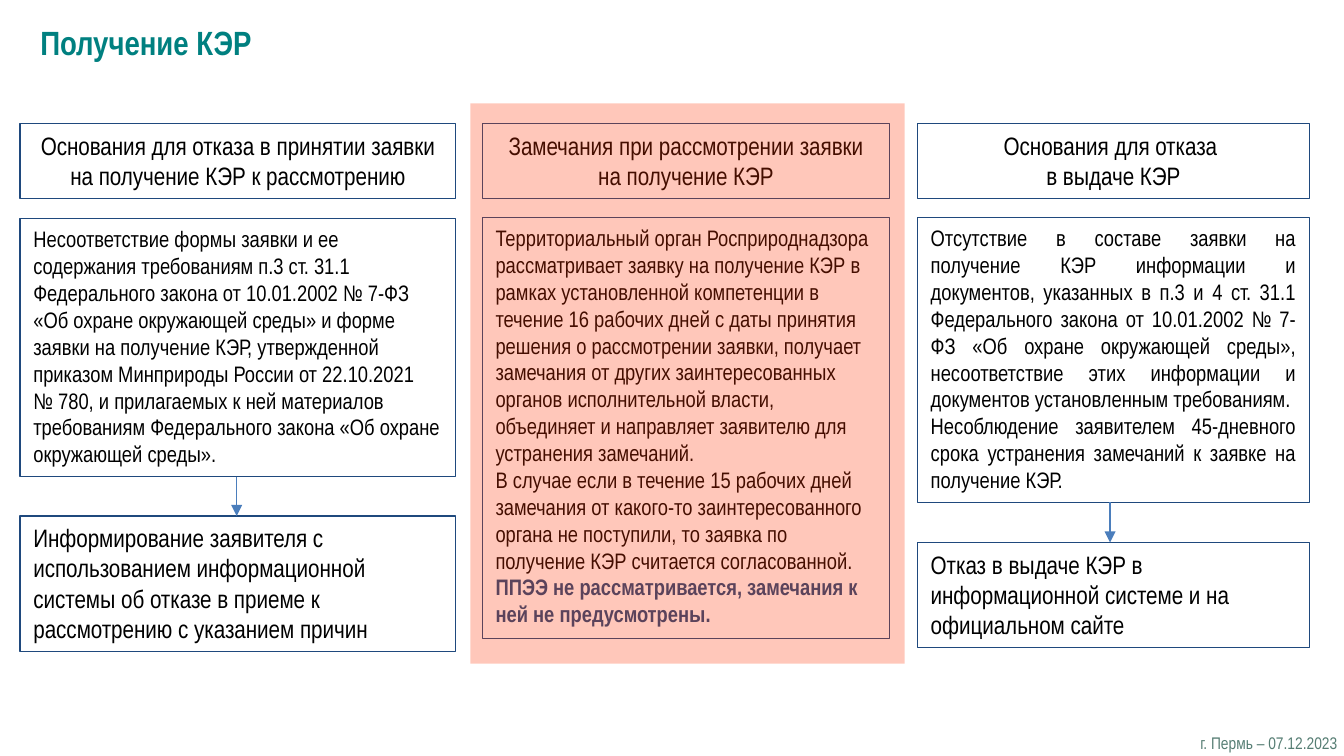
from lxml import etree
from pptx import Presentation
from pptx.dml.color import RGBColor
from pptx.enum.shapes import MSO_CONNECTOR, MSO_SHAPE
from pptx.enum.text import MSO_ANCHOR, MSO_AUTO_SIZE, PP_ALIGN
from pptx.oxml.ns import qn
from pptx.util import Pt

FONT = "Arial Narrow"
BLACK, NAVY, BLUE = "000000", "1F497D", "4B7EBC"
TEAL, GREEN, RED = "008080", "557D73", "FF3300"
HEADER_TOP, HEADER_HEIGHT = 66.2, 40.3
HEADER_SIZE, BODY_SIZE = 13.5, 12

TITLE = "Получение КЭР"
FOOTER = "г. Пермь – 07.12.2023"
HIGHLIGHT = (252, 55.4, 232.6, 300.2)

# Vertical ranges are (top, height); the outcome box is optional.
COLUMNS = [
    {
        "left": 10.8, "width": 233.3, "align": PP_ALIGN.LEFT,
        "header": ["Основания для отказа в принятии заявки на получение КЭР к рассмотрению"],
        "body_range": (117.2, 138.2),
        "body": [
            "Несоответствие формы заявки и ее содержания требованиям п.3 ст. 31.1 "
            "Федерального закона от 10.01.2002 № 7-ФЗ «Об охране окружающей среды» и форме "
            "заявки на получение КЭР, утвержденной приказом Минприроды России от 22.10.2021 \v"
            "№ 780, и прилагаемых к ней материалов требованиям Федерального закона "
            "«Об охране окружающей среды».",
        ],
        "outcome_range": (276.4, 72.8), "arrow_x": 126.8,
        "outcome": "Информирование заявителя с использованием информационной системы "
                   "об отказе в приеме к рассмотрению с указанием причин",
    },
    {
        "left": 258.4, "width": 218.2, "align": PP_ALIGN.LEFT,
        "header": ["Замечания при рассмотрении заявки на получение КЭР"],
        "body_range": (116.6, 225.4),
        "body": [
            "Территориальный орган Росприроднадзора рассматривает заявку на получение КЭР "
            "в рамках установленной компетенции в течение 16 рабочих дней с даты принятия "
            "решения о рассмотрении заявки, получает замечания от других заинтересованных "
            "органов исполнительной власти, объединяет и направляет заявителю для "
            "устранения замечаний.",
            "В случае если в течение 15 рабочих дней замечания от какого-то "
            "заинтересованного органа не поступили, то заявка по получение КЭР считается "
            "согласованной.",
        ],
        "emphasis": "ППЭЭ не рассматривается, замечания к ней не предусмотрены.",
    },
    {
        "left": 491.5, "width": 209.9, "align": PP_ALIGN.JUSTIFY,
        "header": ["Основания для отказа ", "в выдаче КЭР"],
        "body_range": (116.6, 152.6),
        "body": [
            "Отсутствие в составе заявки на получение КЭР информации и документов, "
            "указанных в п.3 и 4 ст. 31.1 Федерального закона от 10.01.2002 № 7-ФЗ "
            "«Об охране окружающей среды», несоответствие этих информации и документов "
            "установленным требованиям.",
            "Несоблюдение заявителем 45-дневного срока устранения замечаний к заявке на "
            "получение КЭР.",
        ],
        "outcome_range": (290.6, 56.2), "arrow_x": 594.7,
        "outcome": "Отказ в выдаче КЭР в информационной системе и на официальном сайте",
    },
]


def paint(color_format, color):
    color_format.rgb = RGBColor.from_string(color)


def points(*values):
    return [Pt(value) for value in values]


def write(shape, lines, size, color=BLACK, align=PP_ALIGN.LEFT, bold=False):
    frame = shape.text_frame
    frame.text = "\n".join(lines)
    frame.word_wrap = True
    frame.auto_size = MSO_AUTO_SIZE.NONE
    frame.vertical_anchor = MSO_ANCHOR.TOP
    for paragraph in frame.paragraphs:
        paragraph.alignment = align
        for run in paragraph.runs:
            run.font.name, run.font.size, run.font.bold = FONT, Pt(size), bold
            paint(run.font.color, color)


def add_box(slide, left, top, width, height, lines, size, align=PP_ALIGN.LEFT):
    box = slide.shapes.add_shape(MSO_SHAPE.RECTANGLE, *points(left, top, width, height))
    box.shadow.inherit = False
    box.fill.background()
    paint(box.line.color, NAVY)
    box.line.width = Pt(0.75)
    write(box, lines, size, align=align)
    return box


def add_arrow(slide, x, top, bottom):
    arrow = slide.shapes.add_connector(MSO_CONNECTOR.STRAIGHT, *points(x, top, x, bottom))
    paint(arrow.line.color, BLUE)
    arrow.line.width = Pt(0.75)
    line = arrow.line._get_or_add_ln()
    etree.SubElement(line, qn("a:tailEnd"), type="triangle")
    etree.SubElement(arrow._element.spPr, qn("a:effectLst"))


def add_column(slide, column):
    left, width = column["left"], column["width"]
    add_box(slide, left, HEADER_TOP, width, HEADER_HEIGHT,
            column["header"], HEADER_SIZE, PP_ALIGN.CENTER)

    top, height = column["body_range"]
    emphasis = column.get("emphasis")
    lines = column["body"] + ([emphasis] if emphasis else [])
    body = add_box(slide, left, top, width, height, lines, BODY_SIZE, column["align"])
    if emphasis:
        font = body.text_frame.paragraphs[-1].runs[0].font
        font.bold = True
        paint(font.color, NAVY)

    if "outcome" in column:
        outcome_top, outcome_height = column["outcome_range"]
        add_box(slide, left, outcome_top, width, outcome_height,
                [column["outcome"]], HEADER_SIZE)
        add_arrow(slide, column["arrow_x"], top + height, outcome_top)


def add_highlight(slide):
    highlight = slide.shapes.add_shape(MSO_SHAPE.RECTANGLE, *points(*HIGHLIGHT))
    highlight.shadow.inherit = False
    highlight.line.fill.background()
    highlight.fill.solid()
    paint(highlight.fill.fore_color, RED)
    color = highlight._element.spPr.find(qn("a:solidFill"))[0]
    etree.SubElement(color, qn("a:alpha"), val="27000")


def add_footer(slide):
    footer = slide.shapes.add_textbox(*points(446.4, 394.6, 275, 12.2))
    write(footer, [FOOTER], 9, GREEN, PP_ALIGN.RIGHT)
    frame = footer.text_frame
    frame.margin_left = frame.margin_right = Pt(5)
    frame.margin_top = frame.margin_bottom = Pt(2.9)
    frame.paragraphs[0].line_spacing = Pt(6)


def main():
    presentation = Presentation()
    presentation.slide_width, presentation.slide_height = points(720, 405)
    slide = presentation.slides.add_slide(presentation.slide_layouts[5])

    title = slide.shapes.title
    title.left, title.top, title.width, title.height = points(14.4, 7.9, 691.2, 28.8)
    write(title, [TITLE], 18, TEAL, bold=True)

    for column in COLUMNS:
        add_column(slide, column)
    add_highlight(slide)
    add_footer(slide)
    presentation.save("out.pptx")


if __name__ == "__main__":
    main()
